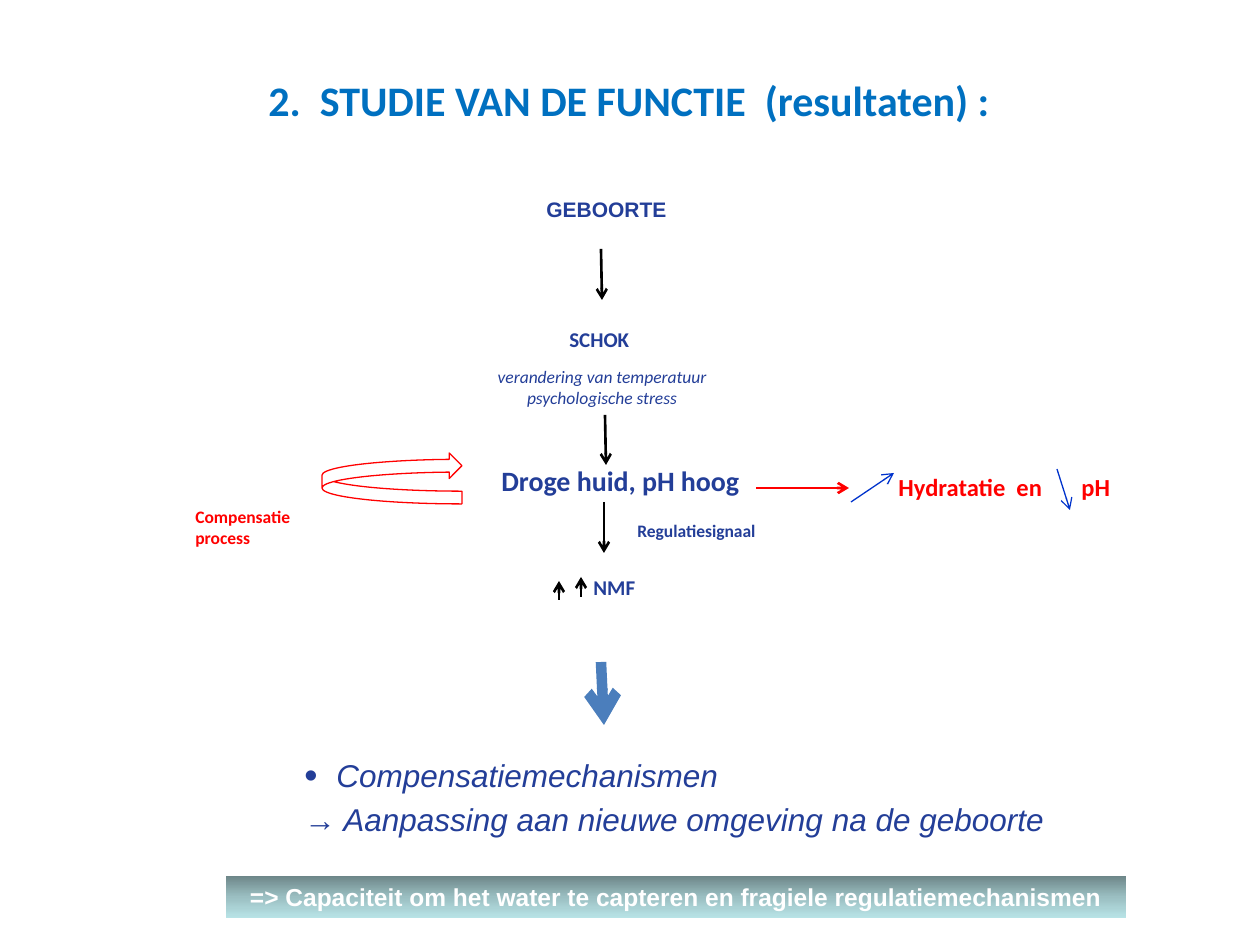
"""Build the slide on the study of skin function at birth."""
from copy import deepcopy

from lxml.etree import SubElement
from pptx import Presentation
from pptx.dml.color import RGBColor
from pptx.enum.shapes import MSO_CONNECTOR as Connector, MSO_SHAPE as Shape
from pptx.enum.text import MSO_ANCHOR as Anchor, MSO_AUTO_SIZE as AutoSize, PP_ALIGN as Align
from pptx.oxml.ns import qn
from pptx.util import Emu, Pt

NAVY = RGBColor(0x23, 0x3E, 0x98)
RED = RGBColor(0xFF, 0x00, 0x00)
BLACK = RGBColor(0x00, 0x00, 0x00)
WHITE = RGBColor(0xFF, 0xFF, 0xFF)
TITLE_BLUE = RGBColor(0x00, 0x70, 0xC0)
TREND_BLUE = RGBColor(0x00, 0x33, 0xCC)
STEEL = RGBColor(0x4B, 0x7E, 0xBC)
BAND = ((0, RGBColor(0x6D, 0x86, 0x88)), (0.5, RGBColor(0x9B, 0xBF, 0xC2)),
        (1, RGBColor(0xB8, 0xE3, 0xE6)))
PX_PER_INCH = 126


def px(length):
    return Emu(round(length * 914400 / PX_PER_INCH))


def write(frame, lines, size=12, color=NAVY, font="Calibri", bold=True, italic=False,
          align=Align.LEFT, gap=0):
    for index, line in enumerate(lines):
        paragraph = frame.paragraphs[0] if index == 0 else frame.add_paragraph()
        paragraph.alignment = align
        paragraph.space_before = Pt(gap)
        run = paragraph.add_run()
        run.text = line
        style = run.font
        style.size, style.name, style.bold, style.italic = Pt(size), font, bold, italic
        style.color.rgb = color


class Board:
    """Holds the slide and draws each kind of element in its style."""

    def __init__(self, slide):
        self.shapes = slide.shapes

    def label(self, box, *lines, wrap=False, **style):
        frame = self.shapes.add_textbox(*map(px, box)).text_frame
        frame.word_wrap = wrap
        frame.auto_size = AutoSize.SHAPE_TO_FIT_TEXT
        write(frame, lines, **style)
        return frame

    def arrow(self, start, end, color=BLACK, width=1.5):
        link = self.shapes.add_connector(Connector.STRAIGHT, *map(px, start + end))
        link.line.color.rgb = color
        link.line.width = Pt(width)
        SubElement(link.line._get_or_add_ln(), qn("a:tailEnd"), type="arrow")
        SubElement(link._element.spPr, qn("a:effectLst"))

    def loop(self, box, color):
        bend = self.shapes.add_shape(Shape.CURVED_RIGHT_ARROW, *map(px, box))
        bend.shadow.inherit = False
        for index, amount in enumerate((0.25, 0.5, 0.25)):
            bend.adjustments[index] = amount
        bend.fill.background()
        bend.line.color.rgb = color
        bend.line.width = Pt(0.75)
        bend._element.spPr.find(qn("a:xfrm")).set("flipV", "1")

    def band(self, box, text, **style):
        bar = self.shapes.add_shape(Shape.RECTANGLE, *map(px, box))
        bar.shadow.inherit = False
        bar.line.fill.background()
        bar.fill.gradient()
        bar.fill.gradient_angle = 270
        first = bar._element.spPr.find(".//" + qn("a:gs"))
        first.addnext(deepcopy(first))
        for stop, (position, color) in zip(bar.fill.gradient_stops, BAND):
            stop.position = position
            stop.color.rgb = color
        bar.text_frame.word_wrap = False
        bar.text_frame.vertical_anchor = Anchor.MIDDLE
        write(bar.text_frame, [text], align=Align.CENTER, **style)

    def conclusions(self, box, *lines):
        frame = self.label(box, *lines, wrap=True, size=18, font="Arial",
                           bold=False, italic=True, gap=3.6)
        for paragraph, margin, hanging in zip(frame.paragraphs, (158, 126), (-32, 0)):
            layout = paragraph._p.get_or_add_pPr()
            layout.set("marL", str(px(margin)))
            layout.set("indent", str(px(hanging)))
        bullet = frame.paragraphs[0]._p.get_or_add_pPr()
        tint = SubElement(bullet, qn("a:buClr"))
        SubElement(tint, qn("a:srgbClr"), val=str(NAVY))
        SubElement(bullet, qn("a:buSzPct"), val="120000")
        SubElement(bullet, qn("a:buFont"), typeface="Arial")
        SubElement(bullet, qn("a:buChar"), char="•")


def main():
    deck = Presentation()
    deck.slide_width, deck.slide_height = px(1260), px(945)
    board = Board(deck.slides.add_slide(deck.slide_layouts[6]))

    board.label((256, 68, 757, 63), "2.  STUDIE VAN DE FUNCTIE  (resultaten) :",
                size=24, color=TITLE_BLUE)
    board.label((533, 190, 147, 38), "GEBOORTE", font="Arial", align=Align.CENTER)
    board.label((557, 320, 86, 38), "SCHOK")
    board.label((484, 360, 236, 55), "verandering van temperatuur", "psychologische stress",
                size=10, bold=False, italic=True, align=Align.CENTER)
    board.label((489, 457, 268, 47), "Droge huid, pH hoog", size=16)
    board.label((625, 514, 146, 34), "Regulatiesignaal", size=10)
    board.label((581, 568, 68, 38), "NMF")
    board.label((183, 500, 121, 55), "Compensatie", "process", size=10, color=RED)
    board.label((886, 466, 169, 43), "Hydratatie  en", size=14, color=RED)
    board.label((1069, 466, 54, 43), "pH", size=14, color=RED)

    for start, end in (((601, 249), (602, 300)), ((605, 415), (606, 465)),
                       ((604, 502), (604, 553)), ((559, 600), (559, 581)),
                       ((581, 597), (581, 577))):
        board.arrow(start, end)
    board.arrow((756, 488), (849, 488), RED)
    board.arrow((851, 502), (894, 473), TREND_BLUE, 0.75)
    board.arrow((1057, 469), (1070, 510), TREND_BLUE, 0.75)
    board.arrow((601, 662), (604, 725), STEEL, 6)
    board.loop((322, 453, 140, 51), RED)

    board.conclusions((166, 750, 1176, 97), "Compensatiemechanismen",
                      "→ Aanpassing aan nieuwe omgeving na de geboorte")
    board.band((226, 876, 900, 42),
               "=> Capaciteit om het water te capteren en fragiele regulatiemechanismen",
               size=14, color=WHITE, font="Arial")
    deck.save("out.pptx")


if __name__ == "__main__":
    main()
